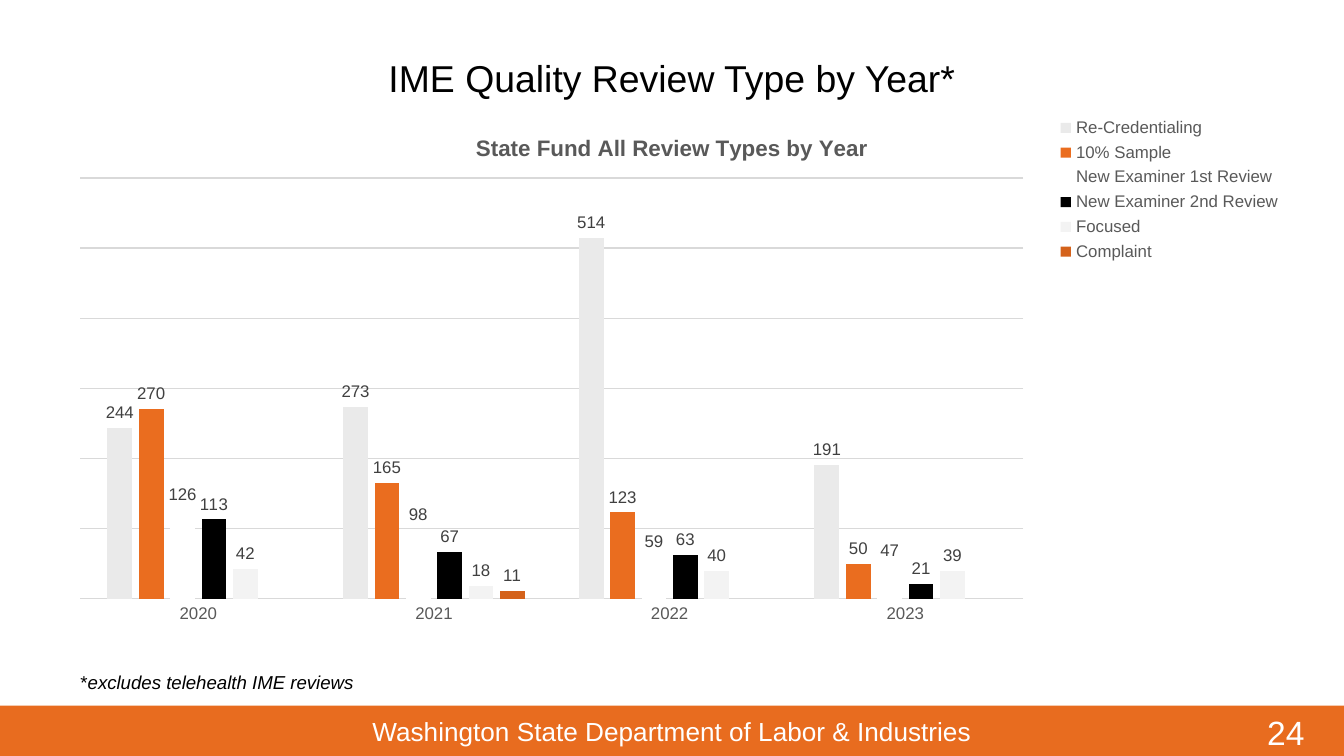
from lxml.etree import SubElement
from pptx import Presentation
from pptx.chart.data import CategoryChartData
from pptx.dml.color import RGBColor
from pptx.enum.chart import (XL_CHART_TYPE, XL_LABEL_POSITION,
                             XL_LEGEND_POSITION, XL_TICK_LABEL_POSITION, XL_TICK_MARK)
from pptx.enum.shapes import MSO_SHAPE
from pptx.enum.text import MSO_ANCHOR, PP_ALIGN
from pptx.oxml.ns import qn
from pptx.util import Inches, Pt

WIDTH = 10
HEIGHT = WIDTH * 9 / 16
FONT = "Arial"
ORANGE, WHITE, BLACK = "E86C1F", "FFFFFF", "000000"
GRAY, LABEL_GRAY, RULE_GRAY = "595959", "404040", "D9D9D9"

YEARS = ["2020", "2021", "2022", "2023"]
REVIEWS = [
    ("Re-Credentialing", "EAEAEA", (244, 273, 514, 191)),
    ("10% Sample", "EA6D1F", (270, 165, 123, 50)),
    ("New Examiner 1st Review", WHITE, (126, 98, 59, 47)),
    ("New Examiner 2nd Review", BLACK, (113, 67, 63, 21)),
    ("Focused", "F3F3F3", (42, 18, 40, 39)),
    ("Complaint", "D4621B", (None, 11, None, None)),
]


def rgb(color):
    return RGBColor.from_string(color)


def set_font(font, size, color, bold=False, italic=False):
    font.name, font.size = FONT, Pt(size)
    font.color.rgb = rgb(color)
    font.bold, font.italic = bold, italic


def inches(box):
    return [Inches(value) for value in box]


def write(frame, text, size, color=BLACK, align=PP_ALIGN.LEFT, **style):
    """Add text to the first paragraph of a frame."""
    frame.word_wrap = True
    paragraph = frame.paragraphs[0]
    paragraph.alignment = align
    run = paragraph.add_run()
    run.text = text
    set_font(run.font, size, color, **style)


def add_text(slide, box, text, size, **style):
    frame = slide.shapes.add_textbox(*inches(box)).text_frame
    write(frame, text, size, **style)
    return frame


def set_layout(parent, index, target, **shares):
    """Give a chart part a fixed place, in shares of the chart."""
    for old in parent.findall(qn("c:layout")):
        parent.remove(old)
    layout = SubElement(parent, qn("c:layout"))
    parent.insert(index, layout)
    manual = SubElement(layout, qn("c:manualLayout"))
    if target:
        SubElement(manual, qn("c:layoutTarget")).set("val", target)
    for mode in ("xMode", "yMode"):
        SubElement(manual, qn("c:" + mode)).set("val", "edge")
    for key, share in shares.items():
        SubElement(manual, qn("c:" + key)).set("val", str(share))


def add_heading(slide, box):
    title = slide.shapes.title
    title.left, title.top, title.width, title.height = inches(box)
    title.text_frame.vertical_anchor = MSO_ANCHOR.MIDDLE
    write(title.text_frame, "IME Quality Review Type by Year*", 20,
          align=PP_ALIGN.CENTER)


def format_axes(chart):
    years = chart.category_axis
    years.major_tick_mark = years.minor_tick_mark = XL_TICK_MARK.NONE
    years.tick_label_position = XL_TICK_LABEL_POSITION.NEXT_TO_AXIS
    set_font(years.tick_labels.font, 9, GRAY)
    counts = chart.value_axis
    counts.minimum_scale, counts.maximum_scale, counts.major_unit = 0, 600, 100
    counts.visible = False
    for line in (years.format.line, counts.major_gridlines.format.line):
        line.color.rgb = rgb(RULE_GRAY)
        line.width = Pt(0.75)


def add_review_chart(slide, box):
    data = CategoryChartData()
    data.categories = YEARS
    for name, _, values in REVIEWS:
        data.add_series(name, values)
    chart = slide.shapes.add_chart(
        XL_CHART_TYPE.COLUMN_CLUSTERED, *inches(box), data).chart
    set_font(chart.font, 10, BLACK)
    chart.has_title = True
    write(chart.chart_title.text_frame, "State Fund All Review Types by Year",
          12, color=GRAY, align=PP_ALIGN.CENTER, bold=True)
    format_axes(chart)

    # Columns and their values
    plot = chart.plots[0]
    plot.gap_width, plot.overlap, plot.vary_by_categories = 219, -27, False
    for series, (_, color, _) in zip(plot.series, REVIEWS):
        series.format.fill.solid()
        series.format.fill.fore_color.rgb = rgb(color)
        series.invert_if_negative = False
        labels = series.data_labels
        labels.show_value = True
        labels.position = XL_LABEL_POSITION.OUTSIDE_END
        set_font(labels.font, 9, LABEL_GRAY)

    # Legend in the corner, plot to its left
    chart.has_legend = True
    chart.legend.position = XL_LEGEND_POSITION.CORNER
    chart.legend.include_in_layout = False
    set_font(chart.legend.font, 9, GRAY)
    chart_xml = chart.element.find(qn("c:chart"))
    set_layout(chart_xml.find(qn("c:plotArea")), 0, "inner",
               x=0.02, y=0.125, w=0.765, h=0.807)
    set_layout(chart_xml.find(qn("c:legend")), 1, None,
               x=0.817, y=0, w=0.18, h=0.295)


def add_footer(slide, box):
    left, top, width, height = box
    band = slide.shapes.add_shape(MSO_SHAPE.RECTANGLE, *inches(box))
    band.shadow.inherit = False
    band.fill.solid()
    band.fill.fore_color.rgb = rgb(ORANGE)
    band.line.fill.background()
    add_text(slide, (left, top + 0.02, width, height - 0.04),
             "Washington State Department of Labor & Industries", 14,
             color=WHITE, align=PP_ALIGN.CENTER)
    add_text(slide, (left + width * 0.933, top, width * 0.058, 0.4),
             "24", 18, color=WHITE)


def add_footnote(slide, box):
    frame = add_text(slide, box, "*", 10)
    write(frame, "excludes telehealth IME reviews", 10, italic=True)


def main():
    deck = Presentation()
    deck.slide_width, deck.slide_height = Inches(WIDTH), Inches(HEIGHT)
    slide = deck.slides.add_slide(deck.slide_layouts.get_by_name("Title Only"))
    margin = WIDTH * 0.0415
    content = WIDTH - 2 * margin
    footer_height = 0.375
    add_footer(slide, (0, HEIGHT - footer_height, WIDTH, footer_height))
    add_heading(slide, (margin, 0.315, content, 0.52))
    add_review_chart(slide, (margin, 0.84, content, 3.88))
    add_footnote(slide, (WIDTH * 0.05, 4.945, 2.75, 0.27))
    deck.save("out.pptx")


if __name__ == "__main__":
    main()
